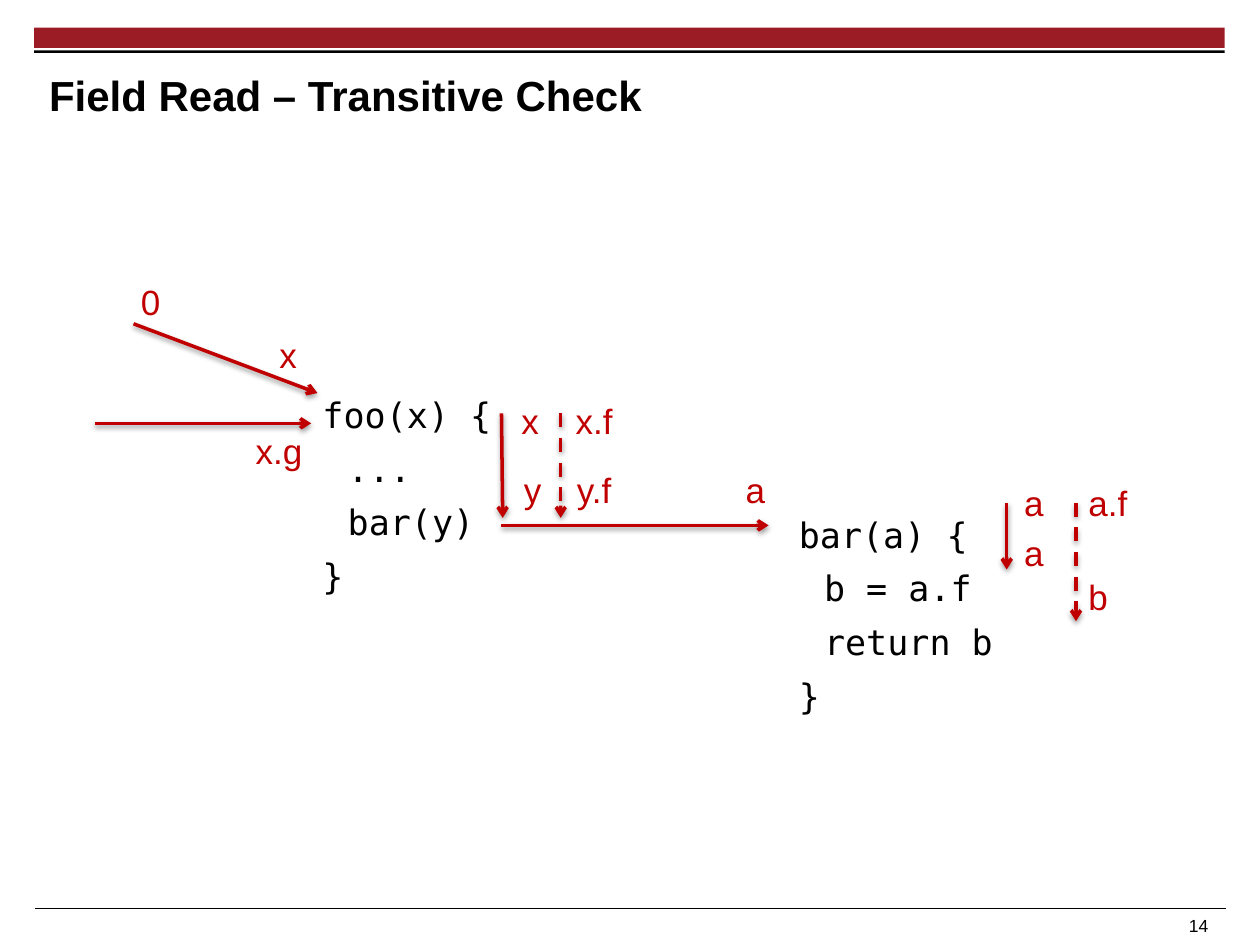
from pptx import Presentation
from pptx.dml.color import RGBColor
from pptx.enum.dml import MSO_LINE
from pptx.enum.shapes import MSO_CONNECTOR, MSO_SHAPE
from pptx.enum.text import MSO_ANCHOR, MSO_AUTO_SIZE, PP_ALIGN
from pptx.oxml.ns import qn
from pptx.util import Inches, Pt
from lxml import etree

STRAIGHT = MSO_CONNECTOR.STRAIGHT
RECTANGLE = MSO_SHAPE.RECTANGLE
DASH = MSO_LINE.DASH
TOP, MIDDLE = MSO_ANCHOR.TOP, MSO_ANCHOR.MIDDLE
LEFT, RIGHT = PP_ALIGN.LEFT, PP_ALIGN.RIGHT
FIT_SHAPE = MSO_AUTO_SIZE.SHAPE_TO_FIT_TEXT

BLACK, BANNER, RED = "000000", "9C1C26", "C00000"
SANS, MONO = "Arial", "DejaVu Sans Mono"


def color(value):
    return RGBColor.from_string(value)


class SlideWriter:
    def __init__(self, page):
        self.page = page

    def bar(self, left, top, width, height, fill):
        shape = self.page.shapes.add_shape(
            RECTANGLE, Inches(left), Inches(top), Inches(width), Inches(height))
        shape.shadow.inherit = False
        shape.fill.solid()
        shape.fill.fore_color.rgb = color(fill)
        shape.line.fill.background()

    def box(self, left, top, width, height, insets=(0.1, 0.05, 0.1, 0.05), anchor=TOP):
        box = self.page.shapes.add_textbox(
            Inches(left), Inches(top), Inches(width), Inches(height))
        frame = box.text_frame
        frame.word_wrap = True
        frame.vertical_anchor = anchor
        (frame.margin_left, frame.margin_top,
         frame.margin_right, frame.margin_bottom) = map(Inches, insets)
        return frame

    def span(self, para, text, size, font=SANS, fill=BLACK, bold=False):
        span = para.add_run()
        span.text = text
        span.font.size = Pt(size)
        span.font.name = font
        span.font.bold = bold
        span.font.color.rgb = color(fill)

    def title(self, text):
        frame = self.box(0.39, 0.44, 9.33, 0.63, (0, 0, 0, 0), MIDDLE)
        self.span(frame.paragraphs[0], text, 24, bold=True)

    def page_number(self, text):
        frame = self.box(1.85, 7.21, 7.88, 0.25, (0.1, 0.05, 0.14, 0.05))
        para = frame.paragraphs[0]
        para.alignment = RIGHT
        self.span(para, text, 10)

    def code(self, left, top, header, statements):
        frame = self.box(left, top, 2.2, 1.59, (0, 0.05, 0, 0.05))
        lines = [header, *statements, "}"]
        for index, text in enumerate(lines):
            para = frame.add_paragraph() if index else frame.paragraphs[0]
            para.alignment = LEFT
            para.line_spacing = 1.1
            para.space_before, para.space_after = Pt(2), Pt(2.3)
            if text in statements:
                para._p.get_or_add_pPr().set("marL", str(Inches(0.2)))
            self.span(para, text, 20, MONO)

    def label(self, text, left, top, width=0.36):
        frame = self.box(left, top, width, 0.44)
        frame.word_wrap = False
        frame.auto_size = FIT_SHAPE
        self.span(frame.paragraphs[0], text, 20, fill=RED)

    def line(self, start, end, fill=BLACK, width=0.6):
        line = self.page.shapes.add_connector(STRAIGHT, *map(Inches, start + end))
        line.line.color.rgb = color(fill)
        line.line.width = Pt(width)
        effects = etree.SubElement(line._element.spPr, qn("a:effectLst"))
        return line, effects

    def arrow(self, start, end, dashed=False):
        line, effects = self.line(start, end, RED, 2)
        if dashed:
            line.line.dash_style = DASH
        etree.SubElement(line.line._get_or_add_ln(), qn("a:tailEnd"), type="arrow")
        shadow = etree.SubElement(
            effects, qn("a:outerShdw"), blurRad=str(Pt(3.1)), dist=str(Pt(1.6)),
            dir="5400000", rotWithShape="0")
        tint = etree.SubElement(shadow, qn("a:srgbClr"), val=BLACK)
        etree.SubElement(tint, qn("a:alpha"), val="38000")


def main():
    deck = Presentation()
    deck.slide_width, deck.slide_height = Inches(10), Inches(7.5)
    writer = SlideWriter(deck.slides.add_slide(deck.slide_layouts[6]))

    writer.bar(0.27, 0.22, 9.45, 0.16, BANNER)
    writer.bar(0.27, 0.4, 9.45, 0.02, BLACK)
    writer.line((0.28, 7.21), (9.73, 7.21))
    writer.page_number("14")
    writer.title("Field Read – Transitive Check")

    writer.code(6.34, 3.99, "bar(a) {", ["b = a.f", "return b"])
    writer.code(2.56, 3.04, "foo(x) {", ["...", "bar(y)"])

    for start, end, dashed in [
        ((1.06, 2.57), (2.52, 3.12), False),
        ((0.75, 3.36), (2.47, 3.36), False),
        ((3.98, 3.28), (3.99, 4.11), False),
        ((4.45, 3.28), (4.45, 4.11), True),
        ((3.98, 4.17), (6.1, 4.17), False),
        ((7.99, 3.99), (7.99, 4.52), False),
        ((8.54, 3.99), (8.54, 4.93), True),
    ]:
        writer.arrow(start, end, dashed)

    for label in [
        ("0", 1.02, 2.18),
        ("x", 2.12, 2.6),
        ("x.g", 1.93, 3.36, 0.59),
        ("x", 4.04, 3.12),
        ("x.f", 4.47, 3.12, 0.54),
        ("y", 4.06, 3.67),
        ("y.f", 4.48, 3.67, 0.51),
        ("a", 5.82, 3.67),
        ("a", 8.03, 3.77),
        ("a", 8.03, 4.17),
        ("a.f", 8.54, 3.77, 0.54),
        ("b", 8.54, 4.52),
    ]:
        writer.label(*label)

    deck.save("out.pptx")


if __name__ == "__main__":
    main()
